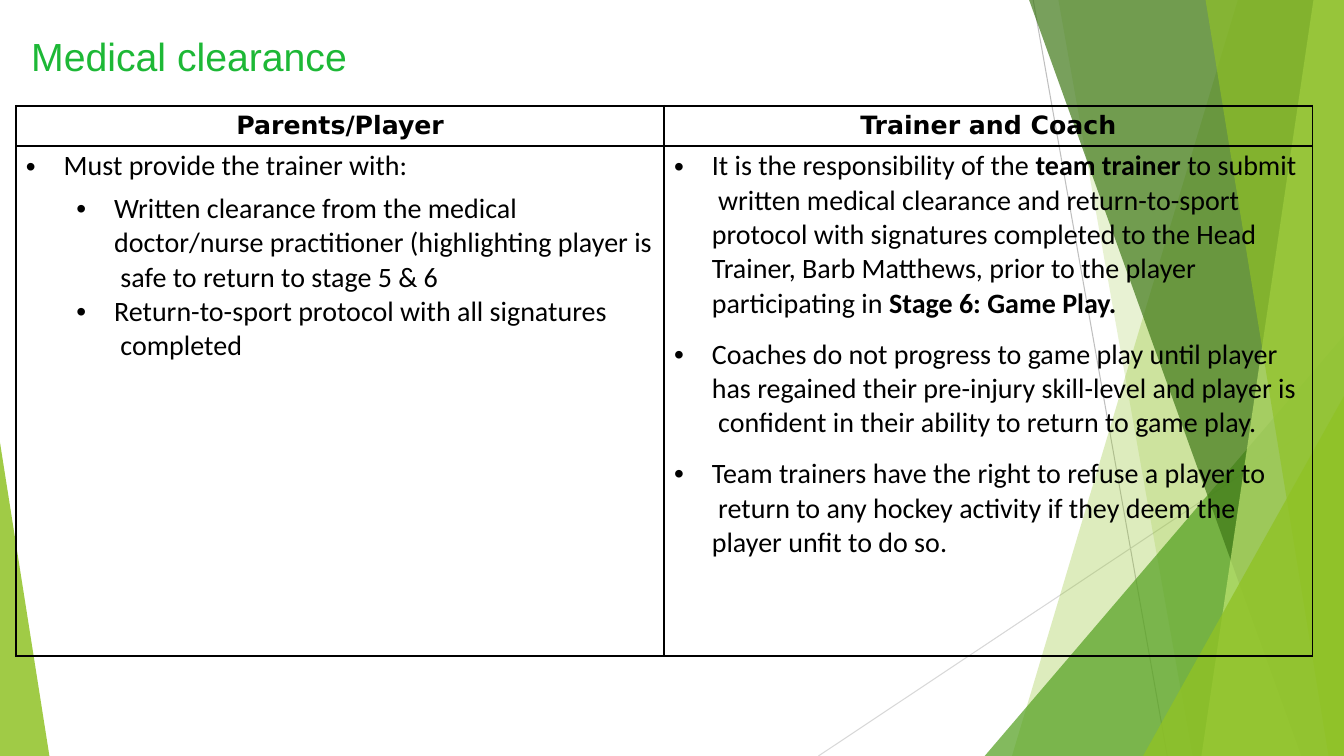
import pptx
import pptx.util
import pptx.dml.color
import pptx.enum.shapes
import pptx.enum.text
import pptx.oxml
import pptx.oxml.ns

Pt = pptx.util.Pt
qn = pptx.oxml.ns.qn
NS = 'xmlns:a="http://schemas.openxmlformats.org/drawingml/2006/main"'


def tint(fill, color, alpha=100):
    fill.solid()
    fill.fore_color.rgb = pptx.dml.color.RGBColor.from_string(color)
    if alpha < 100:
        node = fill._xPr.find(qn("a:solidFill"))[0]
        node.append(pptx.oxml.parse_xml(f'<a:alpha {NS} val="{alpha * 1000}"/>'))


def write(para, text, style, color):
    """Add text to a paragraph; stars wrap bold parts."""
    for num, part in enumerate(text.split("*")):
        for row, line in enumerate(part.split("\n")):
            if row:
                para.add_line_break()
            if line:
                run = para.add_run()
                run.text = line
                for key, value in style.items():
                    setattr(run.font, key, value)
                if num % 2:
                    run.font.bold = True
                tint(run.font.fill, color)


deck = pptx.Presentation()
deck.slide_width, deck.slide_height = Pt(960), Pt(540)
slide = deck.slides.add_slide(deck.slide_layouts[5])
shapes = slide.shapes

# Thin lines behind the facets
for ends, color in [((738, 0, 833.8, 540), "BFBFBF"),
                    ((960, 290.2, 584.6, 540), "D8D8D8")]:
    line = shapes.add_connector(pptx.enum.shapes.MSO_CONNECTOR.STRAIGHT,
                                *[Pt(n) for n in ends])
    line.line.width = Pt(0.75)
    tint(line.line.fill, color)
    line._element.spPr.append(pptx.oxml.parse_xml(f"<a:effectLst {NS}/>"))

# Green facets: a band has its top and foot x, a wedge has its box and tip
facets = [
    ((884.2, 722.9), None, "90C226", 30),
    ((756, 851.8), None, "90C226", 20),
    ((703.4, 239.8, 256.6, 300.2), 1, "54A021", 72),
    ((735.1, 929.5), None, "3F7818", 70),
    ((938.2, 858.2), None, "BFE471", 70),
    ((861.1, 949), None, "90C226", 65),
    ((816.5, 283, 143.5, 257), 1, "90C226", 80),
    ((0, 316.1, 35.3, 223.9), 0, "90C226", 85),
]
for place, tip, color, alpha in facets:
    if tip is None:
        top, foot = place
        path = shapes.build_freeform(Pt(top), 0)
        path.add_line_segments([(Pt(960), 0), (Pt(960), Pt(540)), (Pt(foot), Pt(540))])
        facet = path.convert_to_shape()
    else:
        facet = shapes.add_shape(pptx.enum.shapes.MSO_SHAPE.ISOSCELES_TRIANGLE,
                                 *[Pt(n) for n in place])
        facet.adjustments[0] = tip
    facet.shadow.inherit = False
    facet.line.fill.background()
    tint(facet.fill, color, alpha)

# Title
title = shapes.title
box = {"left": 22.3, "top": 22.3, "width": 228.2, "height": 35.3}
for key, value in box.items():
    setattr(title, key, Pt(value))
frame = title.text_frame
form = {"margin_left": 0, "margin_right": 0, "margin_top": Pt(0.7), "margin_bottom": 0,
        "word_wrap": False, "vertical_anchor": pptx.enum.text.MSO_ANCHOR.TOP,
        "auto_size": pptx.enum.text.MSO_AUTO_SIZE.NONE}
for key, value in form.items():
    setattr(frame, key, value)
frame.paragraphs[0].alignment = pptx.enum.text.PP_ALIGN.LEFT
write(frame.paragraphs[0], "Medical clearance",
      {"name": "Arial", "size": Pt(28), "bold": False}, "1DB836")

# Table text: each point has its level, space before and words
heads = ["Parents/Player", "Trainer and Coach"]
lists = [
    [(0, 0, "Must provide the trainer with:"),
     (1, 6, "Written clearance from the medical\ndoctor/nurse practitioner "
            "(highlighting player is\n safe to return to stage 5 & 6"),
     (1, 0, "Return-to-sport protocol with all signatures\n completed")],
    [(0, 0, "It is the responsibility of the *team trainer *to submit\n"
            " written medical clearance and return-to-sport\n"
            "protocol with signatures completed to the Head\n"
            "Trainer, Barb Matthews, prior to the player\n"
            "participating in *Stage 6: Game Play.*"),
     (0, 12, "Coaches do not progress to game play until player\n"
             "has regained their pre-injury skill-level and player is\n"
             " confident in their ability to return to game play."),
     (0, 12, "Team trainers have the right to refuse a player to\n"
             " return to any hockey activity if they deem the\n"
             "player unfit to do so.")],
]
headfont = {"name": "DejaVu Sans", "size": Pt(18), "bold": True}
listfont = {"name": "Calibri", "size": Pt(20), "bold": False}

# Table grid
table = shapes.add_table(2, 2, Pt(11.5), Pt(75.6), Pt(926), Pt(393.1)).table
table.first_row = table.horz_banding = False
for row, high in zip(table.rows, (28.8, 364.3)):
    row.height = Pt(high)
for cell in table.iter_cells():
    for side in ("left", "right", "bottom"):
        setattr(cell, "margin_" + side, 0)
    props = cell._tc.get_or_add_tcPr()
    for edge in ("lnL", "lnR", "lnT", "lnB"):
        props.append(pptx.oxml.parse_xml(
            f'<a:{edge} {NS} w="{Pt(1.5)}"><a:solidFill><a:srgbClr val="000000"/>'
            f'</a:solidFill></a:{edge}>'))
    cell.fill.background()

# Table cells
for col, (head, points) in enumerate(zip(heads, lists)):
    cell = table.cell(0, col)
    cell.margin_top = Pt(3.6)
    para = cell.text_frame.paragraphs[0]
    para.alignment = pptx.enum.text.PP_ALIGN.CENTER
    write(para, head, headfont, "000000")

    cell = table.cell(1, col)
    cell.margin_top = Pt(2.2)
    frame = cell.text_frame
    for num, (level, space, text) in enumerate(points):
        para = frame.add_paragraph() if num else frame.paragraphs[0]
        para.level = level
        para.space_before = Pt(space)
        props = para._p.get_or_add_pPr()
        props.set("marL", str(Pt(34 + 36 * level)))
        props.set("indent", str(Pt(-27)))
        for mark in ('buClr {}><a:srgbClr val="000000"/></a:buClr>',
                     'buFont {} typeface="Arial"/>', 'buChar {} char="•"/>'):
            props.append(pptx.oxml.parse_xml("<a:" + mark.format(NS)))
        write(para, text, listfont, "000000")

deck.save("out.pptx")
